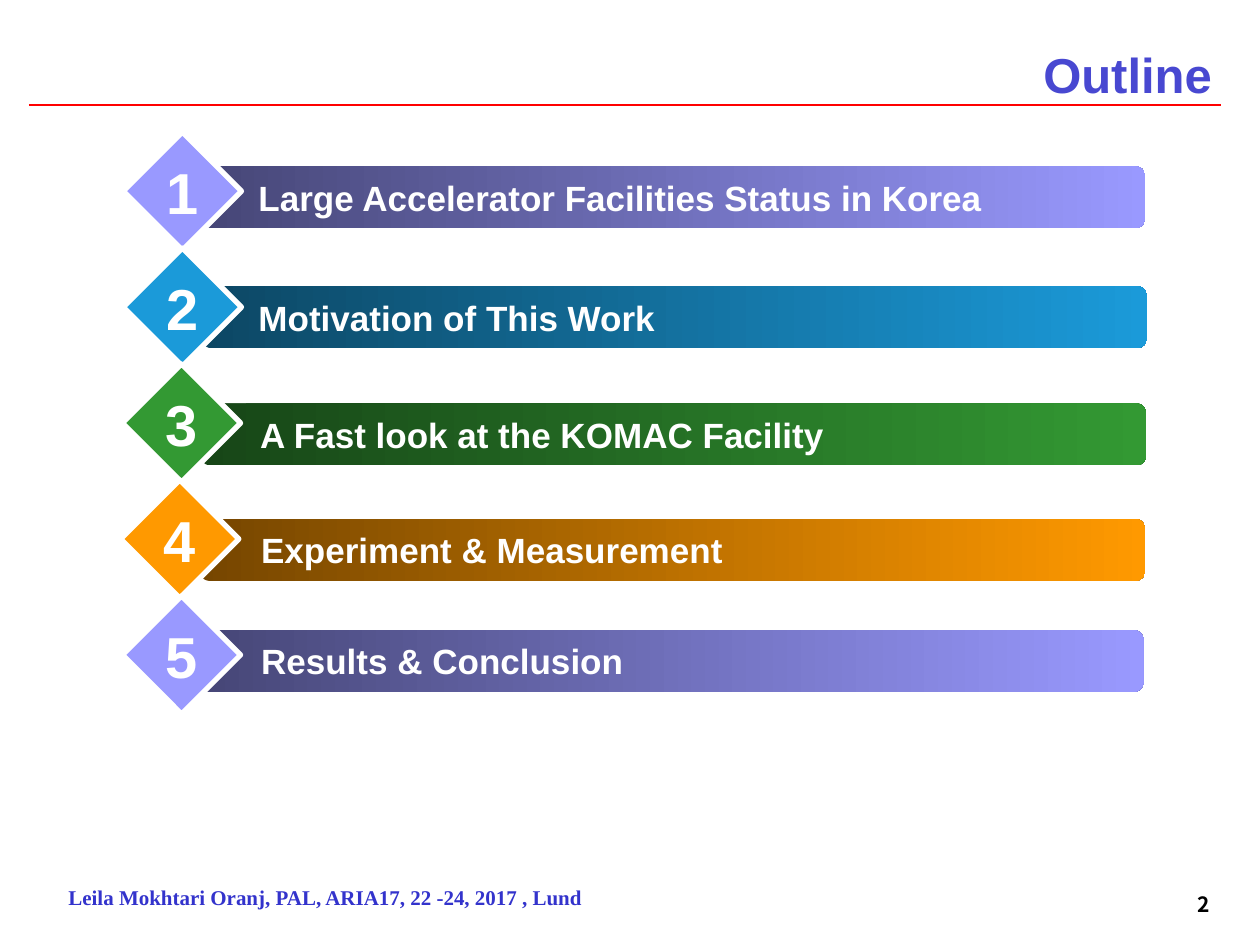
import pptx
import pptx.util
import pptx.dml.color
import pptx.enum.shapes
import pptx.enum.text
import pptx.oxml

Pt = pptx.util.Pt
SHAPE = pptx.enum.shapes.MSO_SHAPE
ALIGN = pptx.enum.text.PP_ALIGN
ANCHOR = pptx.enum.text.MSO_ANCHOR

THEME = {
    "title": ("Arial", 28, "4848D1"),
    "label": ("Arial", 20, "FFFFFF"),
    "number": ("Arial", 33, "FFFFFF"),
    "footer": ("Times New Roman", 12, "3333CC"),
    "page": ("Noto Sans CJK KR", 12, "000000"),
    "rule": "FF0000",
    "edge": "FFFFFF",
    "violet": ("464676", "9999FF"),
    "blue": ("0C4764", "1B9AD9"),
    "green": ("174617", "339933"),
    "orange": ("764600", "FF9900"),
}

TITLE = "Outline"
FOOTER = "Leila Mokhtari Oranj, PAL, ARIA17, 22 -24, 2017 , Lund"
PAGE = "2"
# label, colours, diamond left, bar left, bar top, text left
ROWS = [
    ("Large Accelerator Facilities Status in Korea", "violet", 70.5, 114, 95, 146),
    ("Motivation of This Work", "blue", 70.5, 115, 163.5, 146),
    ("A Fast look at the KOMAC Facility", "green", 70, 114.5, 230.5, 147),
    ("Experiment & Measurement", "orange", 69, 114, 296.5, 147.5),
    ("Results & Conclusion", "violet", 70, 113, 360, 147.5),
]
BAR_W, BAR_H = 540.5, 35.5
DIAMOND, DIAMOND_TOP, DIAMOND_STEP = 67.5, 75.5, 66.25


def rgb(value):
    return pptx.dml.color.RGBColor.from_string(value)


def write(sp, text, style, align, anchor, insets, wrap=True):
    tf = sp.text_frame
    tf.word_wrap = wrap
    tf.auto_size = pptx.enum.text.MSO_AUTO_SIZE.NONE
    tf.vertical_anchor = anchor
    tf.margin_left, tf.margin_top, tf.margin_right, tf.margin_bottom = map(Pt, insets)
    p = tf.paragraphs[0]
    p.alignment = align
    p.space_before = Pt(0)
    r = p.add_run()
    r.text = text
    name, size, color = THEME[style]
    r.font.name, r.font.size, r.font.bold = name, Pt(size), True
    r.font.color.rgb = rgb(color)


def add_bar(s, text, colors, left, top, text_left):
    sp = s.shapes.add_shape(SHAPE.ROUNDED_RECTANGLE, Pt(left), Pt(top), Pt(BAR_W), Pt(BAR_H))
    sp.shadow.inherit = False
    sp.line.fill.background()
    sp.fill.gradient()
    sp.fill.gradient_angle = 0
    for stop, color in zip(sp.fill.gradient_stops, colors):
        stop.color.rgb = rgb(color)
    write(sp, text, "label", ALIGN.LEFT, ANCHOR.MIDDLE, (text_left - left, 3.6, 7.2, 3.6))


def add_diamond(s, number, color, left, top):
    sp = s.shapes.add_shape(SHAPE.DIAMOND, Pt(left), Pt(top), Pt(DIAMOND), Pt(DIAMOND))
    sp.shadow.inherit = False
    sp.fill.solid()
    sp.fill.fore_color.rgb = rgb(color)
    sp.line.color.rgb = rgb(THEME["edge"])
    sp.line.width = Pt(3)
    write(sp, number, "number", ALIGN.CENTER, ANCHOR.MIDDLE, (0, 0, 0, 0), wrap=False)


def main():
    prs = pptx.Presentation()
    prs.slide_width, prs.slide_height = Pt(720), Pt(540)
    s = prs.slides.add_slide(prs.slide_layouts[5])

    title = s.shapes.title
    title.left, title.top, title.width, title.height = Pt(355), Pt(19.5), Pt(343.5), Pt(45.5)
    write(title, TITLE, "title", ALIGN.RIGHT, ANCHOR.BOTTOM, (6, 6, 6, 6))

    rule = s.shapes.add_connector(
        pptx.enum.shapes.MSO_CONNECTOR.STRAIGHT, Pt(16.5), Pt(60), Pt(698), Pt(60))
    rule.line.color.rgb = rgb(THEME["rule"])
    rule.line.width = Pt(1.5)
    rule.element.spPr.append(pptx.oxml.parse_xml(
        '<a:effectLst xmlns:a="http://schemas.openxmlformats.org/drawingml/2006/main"/>'))

    for i, (text, tone, diamond_left, bar_left, bar_top, text_left) in enumerate(ROWS):
        colors = THEME[tone]
        add_bar(s, text, colors, bar_left, bar_top, text_left)
        add_diamond(s, str(i + 1), colors[1], diamond_left, DIAMOND_TOP + i * DIAMOND_STEP)

    footer = s.shapes.add_textbox(Pt(11), Pt(502), Pt(329), Pt(21.5))
    write(footer, FOOTER, "footer", ALIGN.RIGHT, ANCHOR.TOP, (7.2, 3.6, 7.2, 3.6))
    page = s.shapes.add_textbox(Pt(536.5), Pt(502), Pt(162), Pt(29))
    write(page, PAGE, "page", ALIGN.RIGHT, ANCHOR.MIDDLE, (7.2, 3.6, 7.2, 3.6))

    prs.save("out.pptx")


if __name__ == "__main__":
    main()
